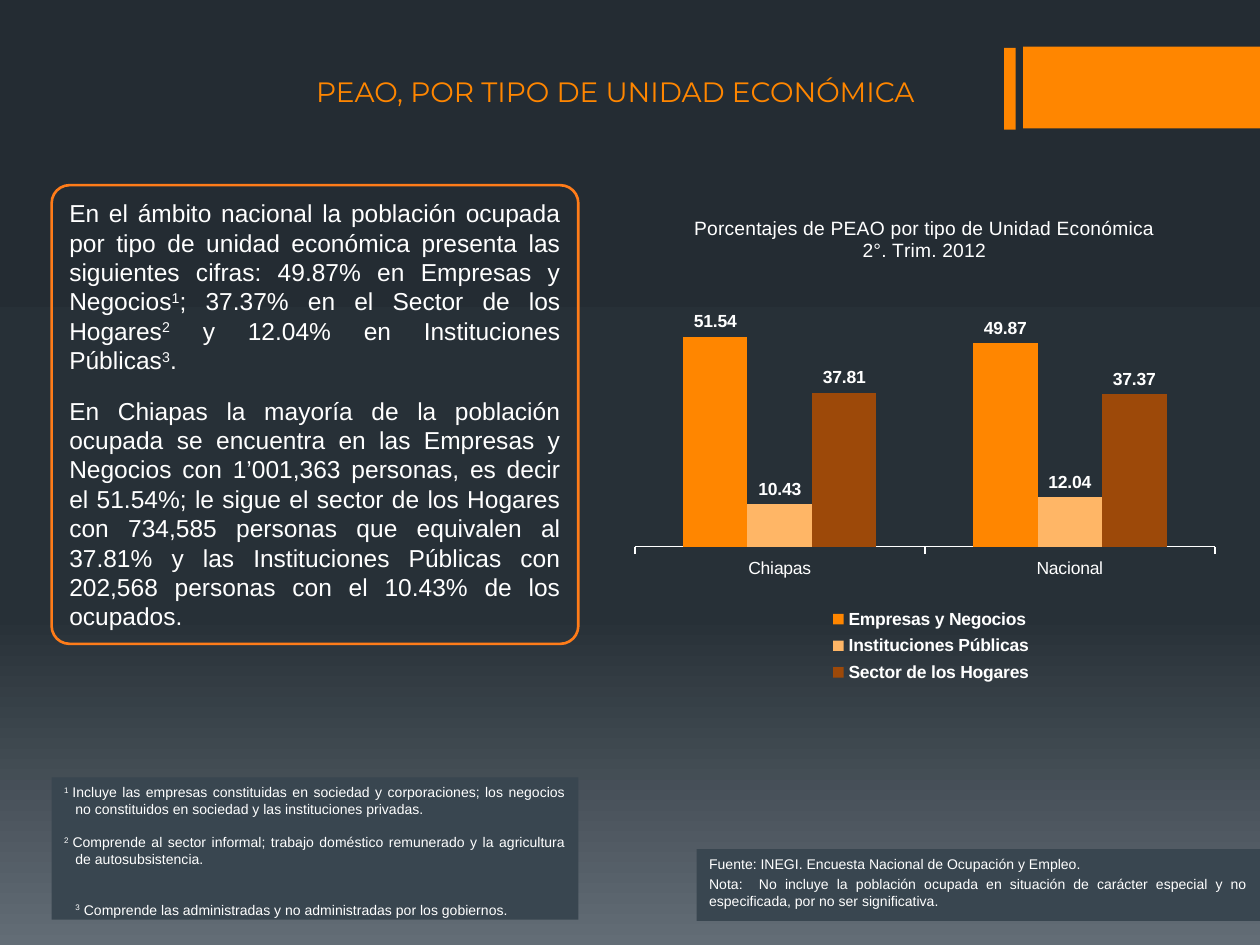
from copy import deepcopy

from lxml.etree import SubElement
from pptx import Presentation
from pptx.chart.data import CategoryChartData
from pptx.dml.color import RGBColor
from pptx.enum.chart import XL_CHART_TYPE, XL_LABEL_POSITION, XL_LEGEND_POSITION, XL_TICK_LABEL_POSITION, XL_TICK_MARK
from pptx.enum.shapes import MSO_SHAPE
from pptx.enum.text import MSO_ANCHOR, PP_ALIGN
from pptx.oxml.ns import qn
from pptx.util import Inches, Pt

COLORS = {
    "orange": "FF8600", "border": "FF7C19", "light": "FFB666", "brown": "9D4909",
    "panel": "394650", "white": "FFFFFF",
    "top": "242C33", "middle": "273037", "bottom": "636D76",
}

# Each paragraph is a list of runs; a run marked True is superscript
BODY = [
    [("En el ámbito nacional la población ocupada por tipo de unidad económica presenta las "
      "siguientes cifras: 49.87% en Empresas y Negocios", False), ("1", True),
     ("; 37.37% en el Sector de los Hogares", False), ("2", True),
     (" y 12.04% en Instituciones Públicas", False), ("3", True), (".", False)],
    [("En Chiapas la mayoría de la población ocupada se encuentra en las Empresas y Negocios con "
      "1’001,363 personas, es decir el 51.54%; le sigue el sector de los Hogares con 734,585 "
      "personas que equivalen al 37.81% y las Instituciones Públicas con 202,568 personas con el "
      "10.43% de los ocupados.", False)],
]
FOOTNOTES = [
    [("1 ", True), ("Incluye las empresas constituidas en sociedad y corporaciones; los negocios no "
                    "constituidos en sociedad y las instituciones privadas.", False)],
    [("2 ", True), ("Comprende al sector informal; trabajo doméstico remunerado y la agricultura de "
                    "autosubsistencia.", False)],
    [("3", True), (" Comprende las administradas y no administradas por los gobiernos.", False)],
]
SOURCE = [
    [("Fuente: INEGI. Encuesta Nacional de Ocupación y Empleo.", False)],
    [("Nota:  No incluye la población ocupada en situación de carácter especial y no "
      "especificada, por no ser significativa.", False)],
]
SERIES = [
    ("Empresas y Negocios", (51.54, 49.87), "orange"),
    ("Instituciones Públicas", (10.43, 12.04), "light"),
    ("Sector de los Hogares", (37.81, 37.37), "brown"),
]


def color(name):
    return RGBColor.from_string(COLORS[name])


def set_format(target, **values):
    for name, value in values.items():
        setattr(target, name, value)


def set_font(font, size, name="Arial", fill="white", bold=False):
    set_format(font, size=Pt(size), name=name, bold=bold)
    font.color.rgb = color(fill)


def set_background(slide):
    fill = slide.background.fill
    fill.gradient()
    fill.gradient_angle = 270
    first = slide.background._cSld.find(".//" + qn("a:gs"))
    first.addnext(deepcopy(first))
    stops = zip(fill.gradient_stops, (0, 0.65, 1), ("top", "middle", "bottom"))
    for stop, position, name in stops:
        stop.position = position
        stop.color.rgb = color(name)


def add_box(slide, bounds, fill=None, line=None, kind=MSO_SHAPE.RECTANGLE):
    shape = slide.shapes.add_shape(kind, *map(Inches, bounds))
    shape.shadow.inherit = False
    if fill:
        shape.fill.solid()
        shape.fill.fore_color.rgb = color(fill)
    else:
        shape.fill.background()
    if line:
        shape.line.color.rgb = color(line)
        shape.line.width = Pt(1.5)
    else:
        shape.line.fill.background()
    return shape


def write_text(shape, paragraphs, size, anchor=MSO_ANCHOR.TOP, align=PP_ALIGN.JUSTIFY,
               gaps=(), indents=(), **font):
    """Write the paragraphs; gaps go before each paragraph after the first."""
    frame = shape.text_frame
    set_format(frame, word_wrap=True, vertical_anchor=anchor)
    for index, runs in enumerate(paragraphs):
        paragraph = frame.add_paragraph() if index else frame.paragraphs[0]
        paragraph.alignment = align
        if index and gaps:
            paragraph.space_before = Pt(gaps[index - 1])
        if indents:
            left, first_line = indents[index]
            properties = paragraph._p.get_or_add_pPr()
            properties.set("marL", str(Inches(left)))
            properties.set("indent", str(Inches(first_line)))
        for text, raised in runs:
            run = paragraph.add_run()
            run.text = text
            set_font(run.font, size, **font)
            if raised:
                run.font._element.set("baseline", "30000")


def set_layout(element, **values):
    """Place a chart part by fractions of the chart area."""
    layout = element.find(qn("c:layout"))
    if layout is None:
        layout = element.makeelement(qn("c:layout"))
        before = {"title": "c:tx", "legend": "c:legendPos"}.get(element.tag.split("}")[1])
        if before:
            element.find(qn(before)).addnext(layout)
        else:
            element.insert(0, layout)
    manual = SubElement(layout, qn("c:manualLayout"))
    if "w" in values and element.tag == qn("c:plotArea"):
        SubElement(manual, qn("c:layoutTarget")).set("val", "inner")
    for axis in "xy":
        SubElement(manual, qn(f"c:{axis}Mode")).set("val", "edge")
    for name, value in values.items():
        SubElement(manual, qn(f"c:{name}")).set("val", str(value))


def add_column_chart(slide, bounds):
    data = CategoryChartData(number_format="0.00")
    data.categories = ["Chiapas", "Nacional"]
    for name, values, _ in SERIES:
        data.add_series(name, values)
    chart = slide.shapes.add_chart(XL_CHART_TYPE.COLUMN_CLUSTERED, *map(Inches, bounds), data).chart
    set_font(chart.font, 10)

    # Title
    frame = chart.chart_title.text_frame
    lines = ("Porcentajes de PEAO por tipo de Unidad Económica", "2°. Trim. 2012")
    for index, line in enumerate(lines):
        paragraph = frame.add_paragraph() if index else frame.paragraphs[0]
        run = paragraph.add_run()
        run.text = line
        set_font(run.font, 11)
    chart.chart_title.include_in_layout = False

    # Columns
    plot = chart.plots[0]
    set_format(plot, gap_width=150, overlap=0, vary_by_categories=False)
    for series, (_, _, fill) in zip(plot.series, SERIES):
        series.format.fill.solid()
        series.format.fill.fore_color.rgb = color(fill)
        labels = series.data_labels
        set_format(labels, show_value=True, number_format="0.00", number_format_is_linked=False,
                   position=XL_LABEL_POSITION.OUTSIDE_END)
        set_font(labels.font, 10, bold=True)

    # Axes
    set_format(chart.value_axis, visible=False, has_major_gridlines=False,
               minimum_scale=0, maximum_scale=60)
    set_format(chart.category_axis, major_tick_mark=XL_TICK_MARK.OUTSIDE,
               tick_label_position=XL_TICK_LABEL_POSITION.LOW)
    chart.category_axis.format.line.color.rgb = color("white")
    chart.category_axis.format.line.width = Pt(1)

    # Legend and placement
    chart.has_legend = True
    set_format(chart.legend, position=XL_LEGEND_POSITION.BOTTOM, include_in_layout=False)
    set_font(chart.legend.font, 10, bold=True)
    set_layout(chart.chart_title._element, x=0.12, y=0.05)
    set_layout(chart._chartSpace.chart.plotArea, x=0.03, y=0.23, w=0.94, h=0.48)
    set_layout(chart.legend._element, x=0.34, y=0.82, w=0.34, h=0.17)


def main():
    presentation = Presentation()
    set_format(presentation, slide_width=Inches(10), slide_height=Inches(7.5))
    slide = presentation.slides.add_slide(presentation.slide_layouts[6])
    set_background(slide)

    # Header bars and title
    add_box(slide, (7.97, 0.38, 0.09, 0.65), fill="orange")
    add_box(slide, (8.12, 0.37, 1.88, 0.65), fill="orange")
    title = slide.shapes.add_textbox(*map(Inches, (1.84, 0.54, 6.09, 0.37)))
    write_text(title, [[("PEAO, POR TIPO DE UNIDAD ECONÓMICA", False)]], 16,
               align=PP_ALIGN.CENTER, name="Montserrat", fill="orange")

    # Main text
    body = add_box(slide, (0.41, 1.47, 4.18, 3.64), line="border", kind=MSO_SHAPE.ROUNDED_RECTANGLE)
    body.adjustments[0] = 0.039
    write_text(body, BODY, 14, anchor=MSO_ANCHOR.MIDDLE, gaps=(12,))

    # Source and footnotes
    source = add_box(slide, (5.53, 6.74, 4.47, 0.57), fill="panel")
    write_text(source, SOURCE, 8, gaps=(2,))
    footnotes = add_box(slide, (0.41, 6.17, 4.18, 1.13), fill="panel")
    write_text(footnotes, FOOTNOTES, 8, gaps=(9.6, 19.2),
               indents=((0.09, -0.09), (0.09, -0.09), (0.09, 0)))

    add_column_chart(slide, (4.89, 1.47, 4.9, 4.04))
    presentation.save("out.pptx")


if __name__ == "__main__":
    main()
